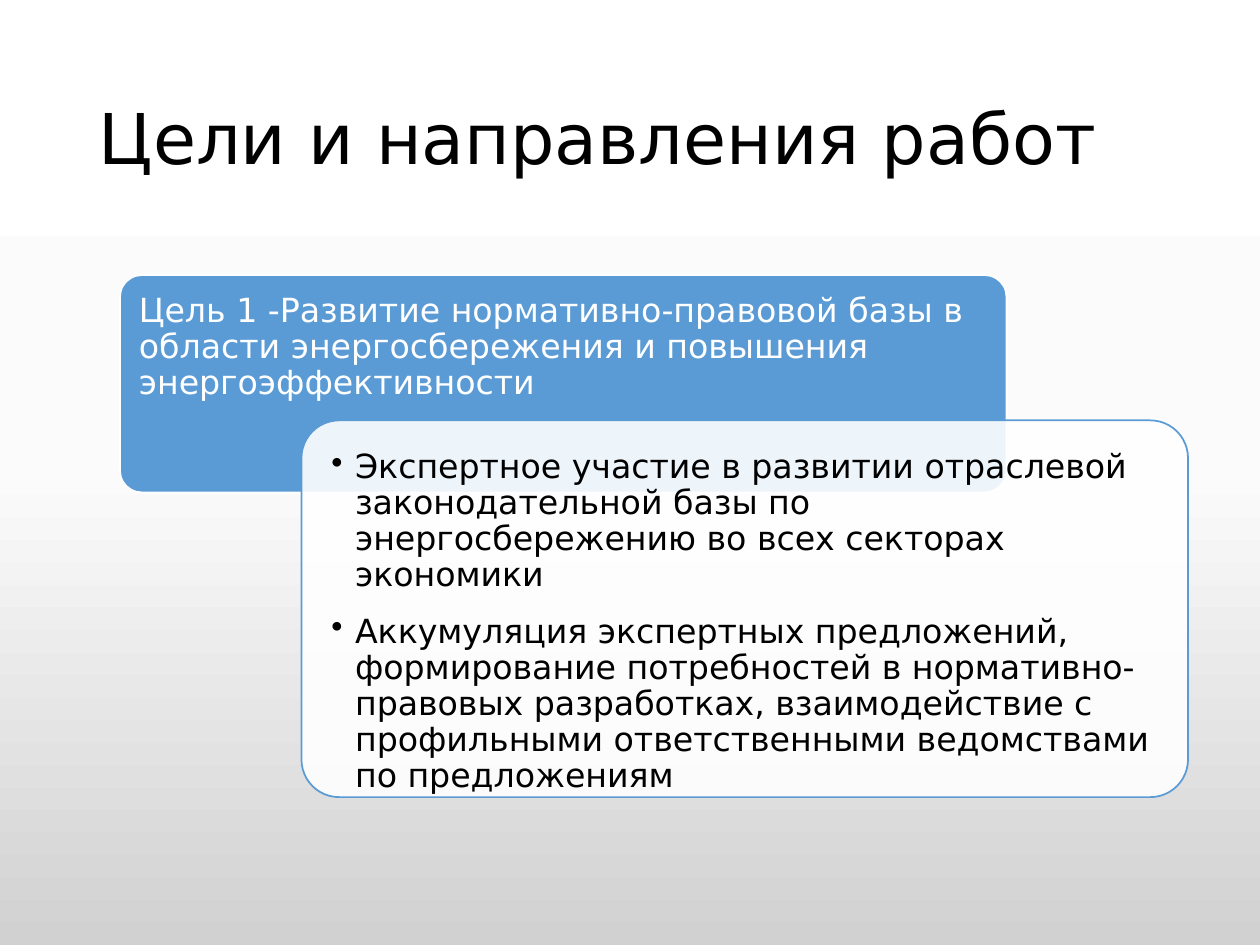
from copy import deepcopy

from lxml import etree
from pptx import Presentation
from pptx.dml.color import RGBColor
from pptx.enum.shapes import MSO_SHAPE
from pptx.enum.text import MSO_ANCHOR, PP_ALIGN
from pptx.oxml.ns import qn
from pptx.util import Pt

ROUND = MSO_SHAPE.ROUNDED_RECTANGLE
TOP, MIDDLE = MSO_ANCHOR.TOP, MSO_ANCHOR.MIDDLE
LEFT = PP_ALIGN.LEFT
FONT = "DejaVu Sans"
BLUE, WHITE, BLACK = "5B9BD5", "FFFFFF", "000000"
SKY = [(0, WHITE), (0.5, "FBFBFB"), (1, "D1D1D1")]

TITLE = "Цели и направления работ"
GOAL = ("Цель 1 -Развитие нормативно-правовой базы в области "
        "энергосбережения и повышения энергоэффективности")
TASKS = [
    "Экспертное участие в развитии отраслевой законодательной базы "
    "по энергосбережению во всех секторах экономики",
    "Аккумуляция экспертных предложений, формирование потребностей в "
    "нормативно-правовых разработках, взаимодействие с профильными "
    "ответственными ведомствами по предложениям",
]


def color(code):
    """Turn a hex string into a colour."""
    return RGBColor.from_string(code)


def add_text(shapes, box, lines, size=19, ink=BLACK, anchor=TOP,
             inset=(10.8, 10.8, 10.8, 10.8), after=0, bullet=False):
    """Place paragraphs in a text box."""
    frame = shapes.add_textbox(*map(Pt, box)).text_frame
    frame.word_wrap = True
    frame.vertical_anchor = anchor
    (frame.margin_left, frame.margin_top,
     frame.margin_right, frame.margin_bottom) = map(Pt, inset)
    for i, line in enumerate(lines):
        para = frame.add_paragraph() if i else frame.paragraphs[0]
        para.alignment = LEFT
        para.line_spacing = 0.9
        para.space_after = Pt(after)
        run = para.add_run()
        run.text = line
        run.font.name = FONT
        run.font.size = Pt(size)
        run.font.color.rgb = color(ink)
        if bullet:
            props = para._p.get_or_add_pPr()
            props.set("marL", str(Pt(13.5)))
            props.set("indent", str(Pt(-13.5)))
            etree.SubElement(props, qn("a:buChar")).set("char", "•")


def add_card(shapes, box, fill, line, alpha=100):
    """Draw a rounded card."""
    card = shapes.add_shape(ROUND, *map(Pt, box))
    card.adjustments[0] = 0.1
    card.shadow.inherit = False
    card.fill.solid()
    card.fill.fore_color.rgb = color(fill)
    card.line.color.rgb = color(line)
    card.line.width = Pt(1)
    if alpha < 100:
        tint = card._element.spPr.find(qn("a:solidFill"))[0]
        etree.SubElement(tint, qn("a:alpha")).set("val", str(alpha * 1000))


def paint_back(slide):
    """Fill the background with a vertical gradient."""
    fill = slide.background.fill
    fill.gradient()
    fill.gradient_angle = 270
    stops = next(slide._element.iter(qn("a:gsLst")))
    stops.insert(1, deepcopy(stops[0]))
    for stop, (place, code) in zip(fill.gradient_stops, SKY):
        stop.position = place
        stop.color.rgb = color(code)


def add_title(shapes, box):
    """Place the slide title."""
    add_text(shapes, box, [TITLE], size=40, anchor=MIDDLE,
             inset=(7.2, 3.6, 7.2, 3.6))


def add_goal(shapes, box):
    """Place the goal card with its heading."""
    left, top, width, height = box
    add_card(shapes, box, BLUE, WHITE)
    add_text(shapes, (left, top, width, height * 2 / 3), [GOAL], ink=WHITE,
             inset=(10.8, 10.8, 10.8, 5.8))


def add_tasks(shapes, box):
    """Place the see-through card with the task list."""
    left, top, width, height = box
    pad = 6.3
    add_card(shapes, box, WHITE, BLUE, alpha=90)
    add_text(shapes, (left + pad, top + pad, width - 2 * pad,
                      height - 2 * pad), TASKS, after=12, bullet=True)


def main():
    """Build the slide and save it."""
    deck = Presentation()
    deck.slide_width, deck.slide_height = Pt(720), Pt(540)
    slide = deck.slides.add_slide(deck.slide_layouts[6])
    paint_back(slide)
    add_title(slide.shapes, (49.5, 28.75, 621, 104.4))
    group = slide.shapes.add_group_shape().shapes
    add_goal(group, (68.6, 157.2, 506.6, 124.2))
    add_tasks(group, (172.3, 240.2, 506.6, 215.3))
    deck.save("out.pptx")


if __name__ == "__main__":
    main()
